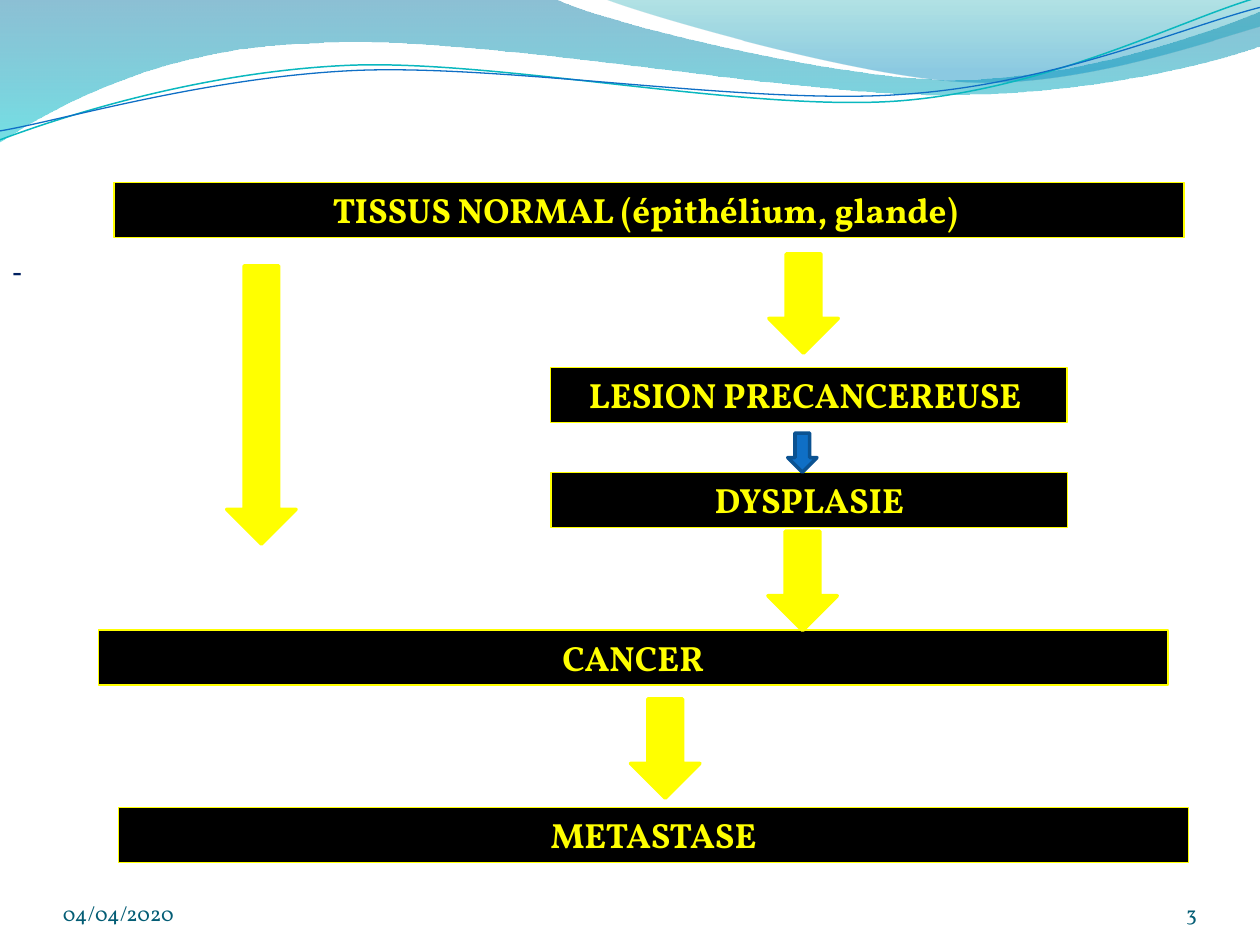
from lxml.etree import SubElement
from pptx import Presentation
from pptx.dml.color import RGBColor
from pptx.enum.shapes import MSO_SHAPE
from pptx.enum.text import MSO_ANCHOR, MSO_AUTO_SIZE, PP_ALIGN
from pptx.oxml.ns import qn
from pptx.util import Cm, Pt

BLACK = RGBColor(0x00, 0x00, 0x00)
YELLOW = RGBColor(0xFF, 0xFF, 0x00)
BLUE = RGBColor(0x0F, 0x6F, 0xC6)
DARK_BLUE = RGBColor(0x0B, 0x52, 0x92)
NAVY = RGBColor(0x00, 0x20, 0x60)
PETROL = RGBColor(0x04, 0x5D, 0x75)
TEAL = RGBColor(0x0A, 0xB8, 0xBF)
OCEAN = RGBColor(0x00, 0x74, 0xA1)
CYAN = RGBColor(0x00, 0xC6, 0xCF)
SEA_GREEN = RGBColor(0x00, 0xA1, 0xA9)
SKY = RGBColor(0x00, 0x8B, 0xBF)

LINE_TILT = -2.7

# Outlines in cm: a start, then steps of one point (line) or three (curve)
LEFT_WAVE = [
    (0, 0), [(11.18, -0.03)],
    [(12.09, 0.43), (16.87, 1.6), (19.25, 1.6)],
    [(21.67, 1.6), (24.33, 0.66), (25.4, 0.23)],
    [(25.43, 0.91)],
    [(24.97, 1.12), (22.1, 1.93), (18.95, 1.91)],
    [(15.8, 1.91), (9.7, 0.71), (6.53, 0.86)],
    [(3.28, 0.91), (1.17, 2.11), (-0.03, 2.87)],
    [(0, 0)],
]
RIGHT_WAVE = [
    (12.17, -0.03),
    [(12.93, 0.28), (17.32, 1.57), (19.53, 1.65)],
    [(21.74, 1.75), (24.41, 0.81), (25.4, 0.53)],
    [(25.4, 0)], [(12.17, -0.03)],
]
TEAL_LINE = [
    (-0.05, 2.22),
    [(1.19, 1.82), (4.02, 1.04), (7.05, 1.05)],
    [(10.05, 1.07), (15.02, 2.37), (18.08, 2.29)],
    [(21.13, 2.2), (23.87, 0.91), (25.41, 0.55)],
]
BLUE_LINE = [
    (-0.04, 2.04),
    [(1.16, 1.9), (4.18, 1.15), (7.2, 1.16)],
    [(10.25, 1.18), (15.18, 2.25), (18.19, 2.16)],
    [(21.21, 2.1), (23.93, 1.06), (25.45, 0.75)],
]


def write_text(shape, text, size, color, font="Vollkorn", bold=False,
               align=PP_ALIGN.LEFT, anchor=MSO_ANCHOR.TOP, spacing=None, inset=None):
    frame = shape.text_frame
    frame.word_wrap = True
    frame.vertical_anchor = anchor
    if inset is not None:
        frame.margin_left = frame.margin_right = inset
        frame.margin_top = frame.margin_bottom = inset
    paragraph = frame.paragraphs[0]
    paragraph.alignment = align
    paragraph.line_spacing = spacing
    run = paragraph.add_run()
    run.text = text
    run.font.name, run.font.size = font, Pt(size)
    run.font.bold, run.font.color.rgb = bold, color


def add_outline(slide, left, top, outline, close):
    start, *steps = outline
    points = [(left + Cm(x), top + Cm(y)) for step in ([start], *steps) for x, y in step]
    builder = slide.shapes.build_freeform(*points[0])
    builder.add_line_segments(points[1:], close=close)
    shape = builder.convert_to_shape()
    shape.shadow.inherit = False
    # Join each run of three segments into one cubic curve
    segments = iter(list(shape._element.spPr.iter(qn("a:lnTo"))))
    for step in steps:
        parts = [next(segments) for _ in step]
        if len(parts) == 3:
            curve = SubElement(parts[0].getparent(), qn("a:cubicBezTo"))
            parts[0].addprevious(curve)
            for part in parts:
                curve.append(part[0])
                part.getparent().remove(part)
    return shape


def add_waves(slide, left, top):
    # Translucent bands, each stop given as colour, position, opacity in percent
    for outline, stops in (
        (LEFT_WAVE, ((OCEAN, 0, 45), (CYAN, 1, 55))),
        (RIGHT_WAVE, ((SEA_GREEN, 0, 30), (SKY, 0.8, 45))),
    ):
        band = add_outline(slide, left, top, outline, True)
        band.line.fill.background()
        band.fill.gradient()
        band.fill.gradient_angle = 270
        for stop, (color, position, _) in zip(band.fill.gradient_stops, stops):
            stop.color.rgb, stop.position = color, position
        colors = band._element.spPr.iter(qn("a:srgbClr"))
        for node, (_, _, opacity) in zip(list(colors), stops):
            SubElement(node, qn("a:alpha")).set("val", str(opacity * 1000))
    # Thin tilted lines
    for outline, color, width in ((TEAL_LINE, TEAL, 0.85), (BLUE_LINE, BLUE, 0.75)):
        curve = add_outline(slide, left, top, outline, False)
        curve.rotation = LINE_TILT
        curve.fill.background()
        curve.line.color.rgb, curve.line.width = color, Pt(width)


def add_block(slide, kind, box, fill, line, width):
    shape = slide.shapes.add_shape(kind, *box)
    shape.shadow.inherit = False
    shape.fill.solid()
    shape.fill.fore_color.rgb = fill
    shape.line.color.rgb, shape.line.width = line, Pt(width)
    return shape


def add_flow(slide, left, top):
    wide, narrow, height = 21.57, 10.41, 1.11
    # Stages
    for x, y, width, label in (
        (0.32, 0, wide, "TISSUS NORMAL (épithélium, glande) "),
        (9.12, 3.73, narrow, "LESION PRECANCEREUSE "),
        (0, 9.02, wide, "CANCER"),
        (0.41, 12.6, wide, "METASTASE"),
        (9.13, 5.84, narrow, "DYSPLASIE"),
    ):
        stage = add_block(slide, MSO_SHAPE.RECTANGLE,
                          (left + Cm(x), top + Cm(y), Cm(width), Cm(height)),
                          BLACK, YELLOW, 0.75)
        write_text(stage, label, 20, YELLOW, bold=True, align=PP_ALIGN.CENTER)
        stage.text_frame.auto_size = MSO_AUTO_SIZE.SHAPE_TO_FIT_TEXT
    # Arrows
    for x, y, width, length, fill, line in (
        (13.52, 1.44, 1.4, 2, YELLOW, YELLOW),
        (2.59, 1.68, 1.4, 5.61, YELLOW, YELLOW),
        (13.5, 7.03, 1.4, 2, YELLOW, YELLOW),
        (10.73, 10.41, 1.4, 2, YELLOW, YELLOW),
        (13.9, 5.05, 0.59, 0.79, BLUE, DARK_BLUE),
    ):
        add_block(slide, MSO_SHAPE.DOWN_ARROW,
                  (left + Cm(x), top + Cm(y), Cm(width), Cm(length)), fill, line, 2)


def add_body(slide, left, top, width, height):
    body = slide.shapes.add_textbox(left, top, width, height)
    write_text(body, "-", 18, NAVY, font="Calibri", align=PP_ALIGN.JUSTIFY, spacing=1.5)


def add_footer(slide, left, top, width, height):
    date_width, number_width = Cm(5.92), Cm(2.11)
    for x, part_width, text, align in (
        (left, date_width, "04/04/2020", PP_ALIGN.LEFT),
        (left + width - number_width, number_width, "3", PP_ALIGN.RIGHT),
    ):
        part = slide.shapes.add_textbox(x, top, part_width, height)
        write_text(part, text, 12, PETROL, align=align, anchor=MSO_ANCHOR.BOTTOM, inset=0)


def main():
    deck = Presentation()
    deck.slide_width, deck.slide_height = Cm(25.4), Cm(19.05)
    slide = deck.slides.add_slide(deck.slide_layouts[6])
    add_waves(slide, 0, 0)
    add_body(slide, 0, Cm(4.57), deck.slide_width, Cm(13.41))
    add_footer(slide, Cm(1.27), Cm(17.65), Cm(22.86), Cm(1.02))
    add_flow(slide, Cm(1.98), Cm(3.68))
    deck.save("out.pptx")


if __name__ == "__main__":
    main()
